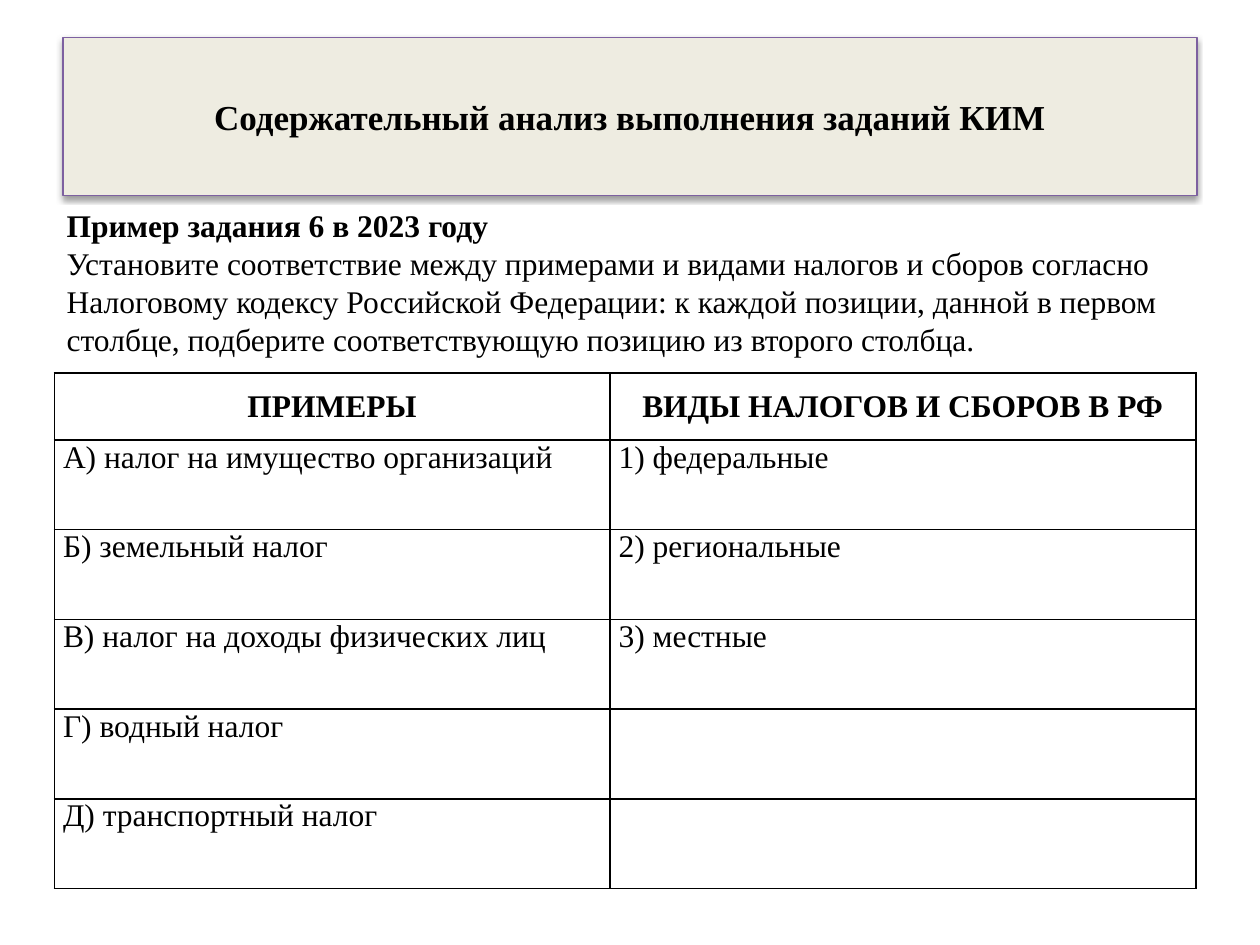
"""Builds a slide with an exam task on matching taxes to their kinds."""
from lxml.etree import SubElement
from pptx import Presentation
from pptx.dml.color import RGBColor
from pptx.enum.shapes import MSO_SHAPE
from pptx.enum.text import MSO_ANCHOR, PP_ALIGN
from pptx.oxml.ns import qn
from pptx.util import Pt

TITLE = "Содержательный анализ выполнения заданий КИМ"
HEADING = "Пример задания 6 в 2023 году"
TASK = ("Установите соответствие между примерами и видами налогов и сборов согласно "
        "Налоговому кодексу Российской Федерации: к каждой позиции, данной в первом "
        "столбце, подберите соответствующую позицию из второго столбца.")
ROWS = [
    ("ПРИМЕРЫ", "ВИДЫ НАЛОГОВ И СБОРОВ В РФ"),
    ("А) налог на имущество организаций", "1) федеральные"),
    ("Б) земельный налог", "2) региональные"),
    ("В) налог на доходы физических лиц", "3) местные"),
    ("Г) водный налог", ""),
    ("Д) транспортный налог", ""),
]
COL_WIDTHS = (317.5, 334.8)
HEAD_HEIGHT, ROW_HEIGHT = 38.2, 51.3
COLORS = {"text": "000000", "banner": "EEECE1", "outline": "7D60A0", "border": "000000"}
FONT = "Times New Roman"


def rgb(name):
    return RGBColor.from_string(COLORS[name])


def write(p, text, size=18, bold=False, align=PP_ALIGN.LEFT):
    p.alignment = align
    p.font.size = Pt(size)
    if text:
        r = p.add_run()
        r.text = text
        r.font.name, r.font.size, r.font.bold = FONT, Pt(size), bold
        r.font.color.rgb = rgb("text")


def add_shadow(sp):
    sp.shadow.inherit = False
    effects = sp._element.spPr.find(qn("a:effectLst"))
    shadow = SubElement(effects, qn("a:outerShdw"), blurRad=str(Pt(3.1)), dist=str(Pt(1.6)),
                        dir="5400000", rotWithShape="0")
    color = SubElement(shadow, qn("a:srgbClr"), val="000000")
    SubElement(color, qn("a:alpha"), val="38000")


def add_borders(cell):
    tc_pr = cell._tc.get_or_add_tcPr()
    for side in ("lnL", "lnR", "lnT", "lnB"):
        ln = SubElement(tc_pr, qn(f"a:{side}"), w=str(Pt(1)))
        fill = SubElement(ln, qn("a:solidFill"))
        SubElement(fill, qn("a:srgbClr"), val=COLORS["border"])


def add_banner(s):
    sp = s.shapes.add_shape(MSO_SHAPE.RECTANGLE, Pt(36), Pt(21.6), Pt(648), Pt(90))
    sp.fill.solid()
    sp.fill.fore_color.rgb = rgb("banner")
    sp.line.color.rgb = rgb("outline")
    sp.line.width = Pt(0.75)
    add_shadow(sp)
    tf = sp.text_frame
    tf.word_wrap = True
    tf.vertical_anchor = MSO_ANCHOR.MIDDLE
    write(tf.paragraphs[0], TITLE, size=20, bold=True, align=PP_ALIGN.CENTER)


def add_task(s):
    tf = s.shapes.add_textbox(Pt(31), Pt(113.8), Pt(669), Pt(94.3)).text_frame
    tf.word_wrap = True
    tf.vertical_anchor = MSO_ANCHOR.MIDDLE
    write(tf.paragraphs[0], HEADING, bold=True, align=PP_ALIGN.JUSTIFY)
    write(tf.add_paragraph(), TASK)


def add_tax_table(s):
    heights = [HEAD_HEIGHT] + [ROW_HEIGHT] * (len(ROWS) - 1)
    table = s.shapes.add_table(len(ROWS), len(COL_WIDTHS), Pt(31), Pt(213.2),
                               Pt(sum(COL_WIDTHS)), Pt(sum(heights))).table
    for col, width in zip(table.columns, COL_WIDTHS):
        col.width = Pt(width)
    for i, (texts, height) in enumerate(zip(ROWS, heights)):
        table.rows[i].height = Pt(height)
        head = i == 0
        for j, text in enumerate(texts):
            cell = table.cell(i, j)
            cell.margin_left = cell.margin_right = Pt(5)
            cell.margin_top = cell.margin_bottom = 0
            cell.vertical_anchor = MSO_ANCHOR.MIDDLE if head else MSO_ANCHOR.TOP
            add_borders(cell)
            cell.fill.background()
            write(cell.text_frame.paragraphs[0], text, bold=head,
                  align=PP_ALIGN.CENTER if head else PP_ALIGN.JUSTIFY)


def main():
    prs = Presentation()
    prs.slide_width, prs.slide_height = Pt(720), Pt(540)
    s = prs.slides.add_slide(prs.slide_layouts[6])
    add_banner(s)
    add_task(s)
    add_tax_table(s)
    prs.save("out.pptx")


if __name__ == "__main__":
    main()
